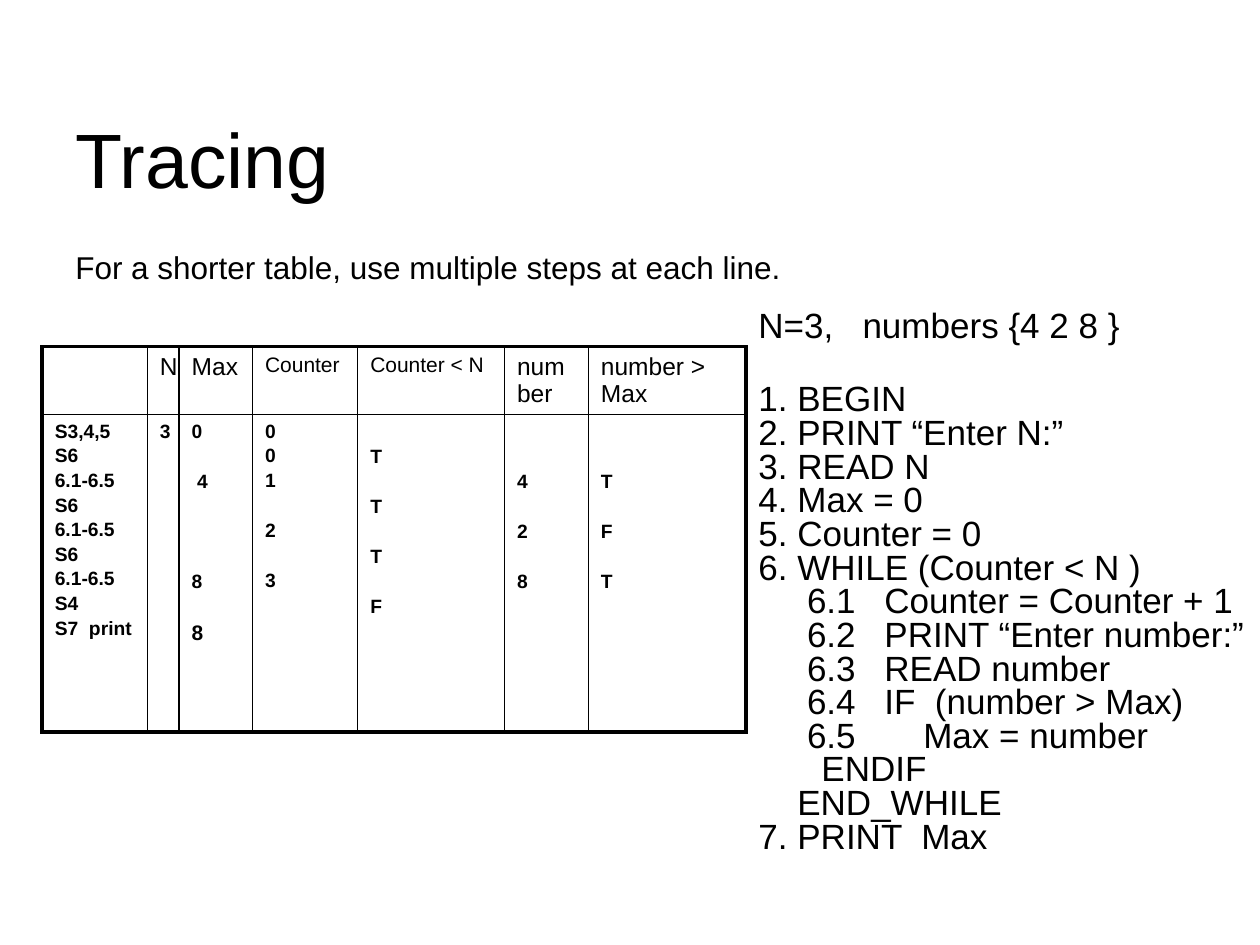
import pptx
import pptx.util
import pptx.dml.color
import pptx.enum.text
from lxml import etree

Cm, Pt = pptx.util.Cm, pptx.util.Pt
BLACK = "000000"
LINE_PITCH = 14.46  # distance between trace steps, in points
STEP_GAP = 1.8      # the part of it that is space between paragraphs


def color(hex_value):
    return pptx.dml.color.RGBColor.from_string(hex_value)


def style(paragraph, size, bold=False):
    paragraph.font.name = "Arial"
    paragraph.font.size = Pt(size)
    paragraph.font.bold = bold
    paragraph.font.color.rgb = color(BLACK)


presentation = pptx.Presentation()
presentation.slide_width, presentation.slide_height = Cm(25.4), Cm(19.05)
slide = presentation.slides.add_slide(presentation.slide_layouts[5])

# Title
title = slide.shapes.title
title.left, title.top, title.width, title.height = Cm(1.27), Cm(1.27), Cm(22.86), Cm(3.81)
title.text_frame.text = "Tracing"
title.text_frame.vertical_anchor = pptx.enum.text.MSO_ANCHOR.MIDDLE
title.text_frame.paragraphs[0].alignment = pptx.enum.text.PP_ALIGN.LEFT
style(title.text_frame.paragraphs[0], 44)

# Trace table: heading, heading size, column width in cm, {step: value}
steps = ["S3,4,5", "S6", "6.1-6.5", "S6", "6.1-6.5", "S6", "6.1-6.5", "S4", "S7  print"]
trace_columns = [
    ("", 14, 2.12, dict(enumerate(steps))),
    ("N", 14, 0.64, {0: "3"}),
    ("Max", 14, 1.48, {0: "0", 2: " 4", 6: "8", 8: "8"}),
    ("Counter", 12, 2.12, {0: "0", 1: "0", 2: "1", 4: "2", 6: "3"}),
    ("Counter < N", 12, 2.96, {1: "T", 3: "T", 5: "T", 7: "F"}),
    ("number", 14, 1.69, {2: "4", 4: "2", 6: "8"}),
    ("number > Max", 14, 3.18, {2: "T", 4: "F", 6: "T"}),
]
last_column = len(trace_columns) - 1
trace = slide.shapes.add_table(2, len(trace_columns), Cm(0.85), Cm(6.99), Cm(14.19), Cm(7.75)).table
trace.first_row = trace.horz_banding = False
trace.rows[0].height, trace.rows[1].height = Cm(1.35), Cm(6.4)

for column, (heading, heading_size, width, values) in enumerate(trace_columns):
    trace.columns[column].width = Cm(width)
    heading_cell, value_cell = trace.cell(0, column), trace.cell(1, column)
    heading_cell.text = heading
    style(heading_cell.text_frame.paragraphs[0], heading_size)

    # Values stand level with their steps
    previous = None
    for step, value in values.items():
        if previous is None:
            paragraph = value_cell.text_frame.paragraphs[0]
            value_cell.margin_top = Cm(0.13) + Pt(step * LINE_PITCH)
        else:
            paragraph = value_cell.text_frame.add_paragraph()
            paragraph.space_before = Pt(STEP_GAP + (step - previous - 1) * LINE_PITCH)
        paragraph.text = value
        style(paragraph, 12 if heading == "Max" and step == 8 else 11, bold=True)
        previous = step

    # Thick frame, thin inner lines
    for row, cell in enumerate((heading_cell, value_cell)):
        outer_sides = {"L": column == 0, "R": column == last_column, "T": row == 0, "B": row == 1}
        properties = cell._tc.get_or_add_tcPr()
        for side, is_outer in outer_sides.items():
            border = etree.SubElement(properties, pptx.oxml.ns.qn(f"a:ln{side}"),
                                      w=str(Pt(2.25 if is_outer else 1)))
            fill = etree.SubElement(border, pptx.oxml.ns.qn("a:solidFill"))
            etree.SubElement(fill, pptx.oxml.ns.qn("a:srgbClr"), val=BLACK)
        cell.fill.background()

# Algorithm
algorithm_lines = [
    "N=3,   numbers {4 2 8 }",
    "1. BEGIN",
    "2. PRINT “Enter N:”",
    "3. READ N",
    "4. Max = 0",
    "5. Counter = 0",
    "6. WHILE (Counter < N )",
    "     6.1\tCounter = Counter + 1",
    "     6.2\tPRINT “Enter number:”",
    "     6.3\tREAD number",
    "     6.4\tIF  (number > Max)",
    "     6.5\t    Max = number",
    "\tENDIF",
    "    END_WHILE",
    "7. PRINT  Max",
]
algorithm = slide.shapes.add_textbox(Cm(15.04), Cm(6.15), Cm(10.36), Cm(11.63)).text_frame
algorithm.word_wrap = True
algorithm.text = "\n".join(algorithm_lines)
for paragraph in algorithm.paragraphs:
    paragraph.line_spacing = 0.8
    style(paragraph, 20)
algorithm.paragraphs[1].space_before = Pt(23)

# Remark under the title
remark = slide.shapes.add_textbox(Cm(1.27), Cm(4.88), Cm(18.62), Cm(1.02)).text_frame
remark.word_wrap = True
remark.text = "For a shorter table, use multiple steps at each line."
style(remark.paragraphs[0], 18)

presentation.save("out.pptx")
